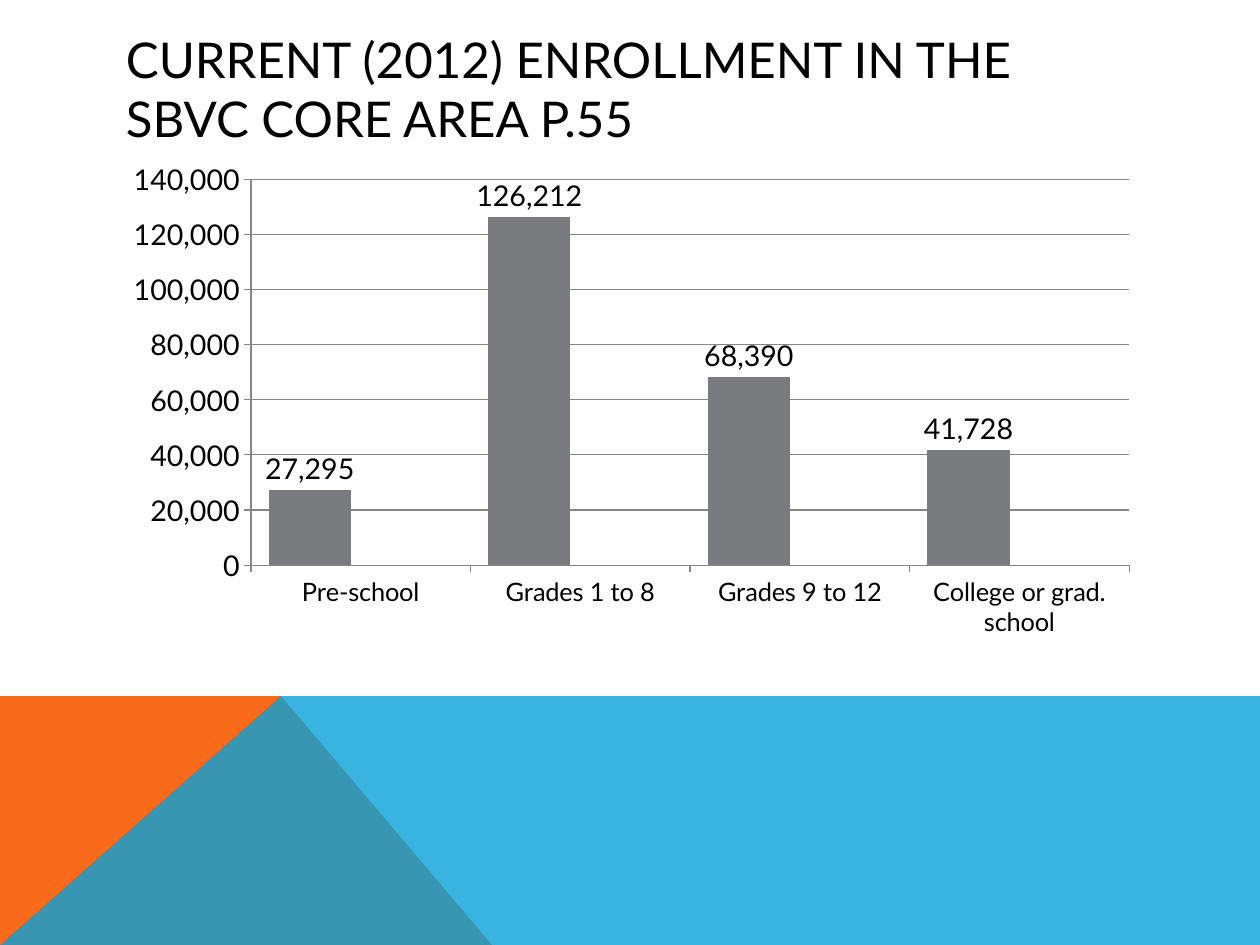
from lxml import etree
from pptx import Presentation
from pptx.chart.data import CategoryChartData
from pptx.dml.color import RGBColor
from pptx.enum.chart import XL_CHART_TYPE, XL_LABEL_POSITION, XL_TICK_MARK
from pptx.enum.text import MSO_ANCHOR
from pptx.oxml.ns import qn
from pptx.util import Pt

PX = 8000
SLIDE_WIDTH, SLIDE_HEIGHT = 1260, 945
FONT = "Lato"
COLORS = {
    "text": "000000",
    "orange": "F96A1B",
    "blue": "08A1D9",
    "gray": "797B7E",
    "axis": "868686",
}
COLUMNS = XL_CHART_TYPE.COLUMN_CLUSTERED
OUTSIDE_END = XL_LABEL_POSITION.OUTSIDE_END
TICK_OUT = XL_TICK_MARK.OUTSIDE
TICK_NONE = XL_TICK_MARK.NONE
MIDDLE = MSO_ANCHOR.MIDDLE

LEVELS = ["Pre-school", "Grades 1 to 8", "Grades 9 to 12", "College or grad. school"]
ENROLLMENT = [27295, 126212, 68390, 41728]
NO_VALUES = [None] * len(LEVELS)
SERIES = [
    ("Series 1", ENROLLMENT, "gray"),
    ("Series 2", NO_VALUES, "orange"),
    ("Series 3", NO_VALUES, "blue"),
]


def rgb(name):
    """Return the named colour."""
    return RGBColor.from_string(COLORS[name])


def emu(*lengths):
    """Turn px lengths into EMU."""
    return [length * PX for length in lengths]


def style_font(font, size):
    """Set the slide's typeface and text colour at a size in points."""
    font.name = FONT
    font.size = Pt(size)
    font.color.rgb = rgb("text")


def add_panel(slide, points, color, opacity=100):
    """Draw a closed, unlined polygon in one colour."""
    builder = slide.shapes.build_freeform(*points[0], scale=PX)
    builder.add_line_segments(points[1:], close=True)
    panel = builder.convert_to_shape()
    panel.shadow.inherit = False
    panel.fill.solid()
    panel.fill.fore_color.rgb = rgb(color)
    panel.line.fill.background()
    if opacity < 100:
        tint = panel.fill._xPr.find(f".//{qn('a:srgbClr')}")
        etree.SubElement(tint, qn("a:alpha")).set("val", str(opacity * 1000))


def add_footer_band(slide, left, top, width, height):
    """Draw the orange corner and the translucent blue band over it."""
    right, bottom = left + width, top + height
    peak = (left + 281, top)
    add_panel(slide, [(left, bottom), (left, top), peak, (left + 492, bottom)], "orange")
    add_panel(slide, [(left, bottom), peak, (right, top), (right, bottom)], "blue", 80)


def add_title(slide, left, top, width, height):
    """Write the slide heading, centred vertically in its box."""
    heading = slide.shapes.add_textbox(*emu(left, top, width, height)).text_frame
    heading.word_wrap = True
    heading.vertical_anchor = MIDDLE
    heading.margin_left = heading.margin_right = 13 * PX
    heading.margin_top = heading.margin_bottom = 7 * PX
    heading.text = "CURRENT (2012) ENROLLMENT IN THE SBVC CORE AREA P.55"
    style_font(heading.paragraphs[0].runs[0].font, 31)


def style_axis(axis, size):
    """Set the ticks, line and label font of one axis."""
    axis.major_tick_mark = TICK_OUT
    axis.minor_tick_mark = TICK_NONE
    axis.format.line.color.rgb = rgb("axis")
    axis.format.line.width = Pt(0.75)
    style_font(axis.tick_labels.font, size)


def add_enrollment_chart(slide, left, top, width, height):
    """Chart enrollment by school level."""
    data = CategoryChartData(number_format="#,##0")
    data.categories = LEVELS
    for name, values, _ in SERIES:
        data.add_series(name, values)
    chart = slide.shapes.add_chart(COLUMNS, *emu(left, top, width, height), data).chart
    chart.has_title = False
    chart.has_legend = False
    style_font(chart.font, 18)

    style_axis(chart.category_axis, 16)
    values_axis = chart.value_axis
    style_axis(values_axis, 18)
    values_axis.minimum_scale = 0
    values_axis.maximum_scale = 140000
    values_axis.major_unit = 20000
    values_axis.tick_labels.number_format = "#,##0"
    values_axis.tick_labels.number_format_is_linked = False
    gridlines = values_axis.major_gridlines.format.line
    gridlines.color.rgb = rgb("axis")
    gridlines.width = Pt(0.75)

    plot = chart.plots[0]
    plot.vary_by_categories = False
    plot.gap_width = 43
    plot.overlap = 38
    for series, (_, _, color) in zip(plot.series, SERIES):
        series.format.fill.solid()
        series.format.fill.fore_color.rgb = rgb(color)
    labels = plot.series[0].data_labels
    labels.show_value = True
    labels.number_format = "#,##0"
    labels.number_format_is_linked = False
    labels.position = OUTSIDE_END
    style_font(labels.font, 18)


def main():
    """Build and save the slide."""
    deck = Presentation()
    deck.slide_width, deck.slide_height = emu(SLIDE_WIDTH, SLIDE_HEIGHT)
    slide = deck.slides.add_slide(deck.slide_layouts[6])
    add_footer_band(slide, 0, 696, SLIDE_WIDTH, SLIDE_HEIGHT - 696)
    add_title(slide, 113, 50, 1037, 76)
    add_enrollment_chart(slide, 113, 152, 1037, 494)
    deck.save("out.pptx")


if __name__ == "__main__":
    main()
